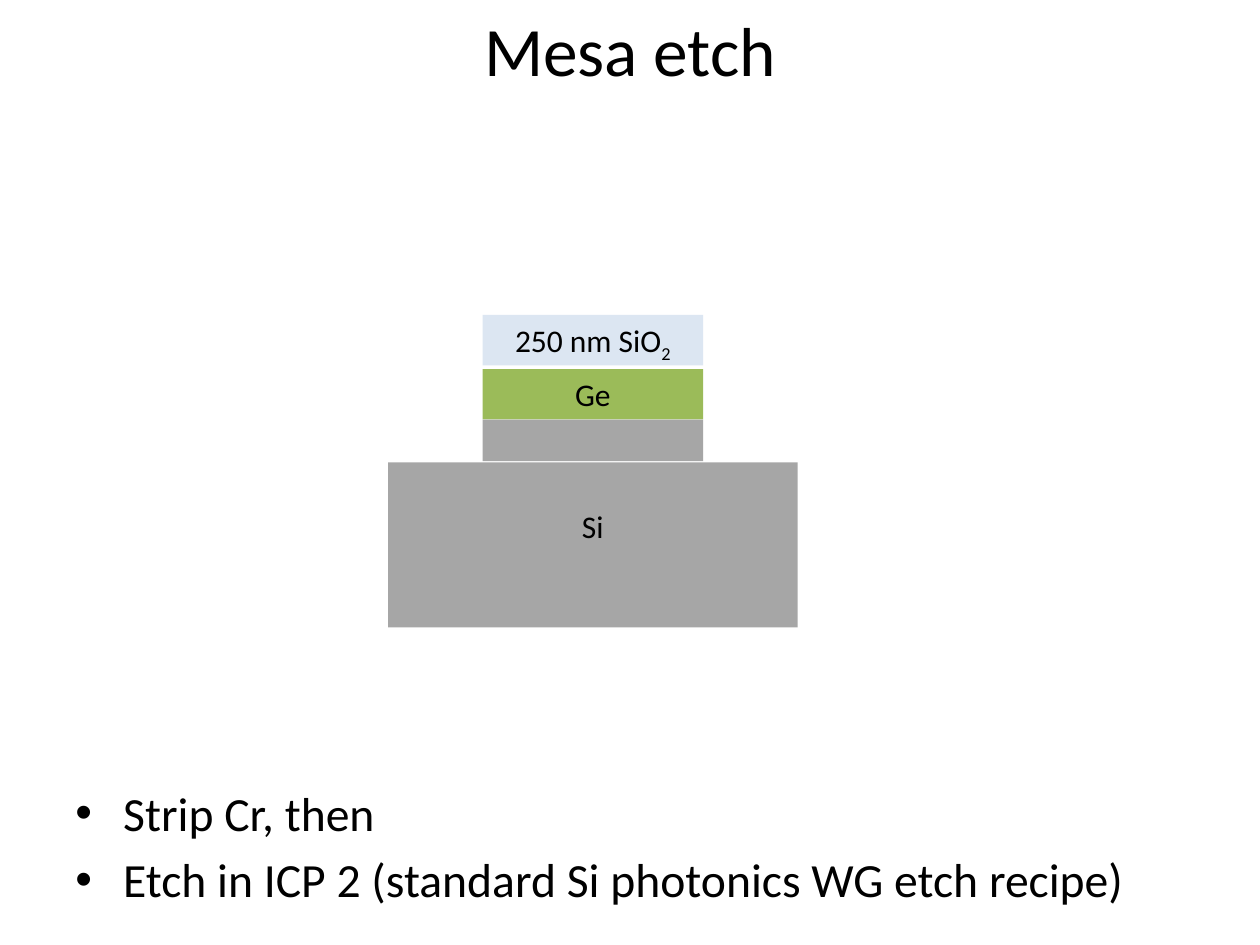
from lxml import etree
from pptx import Presentation
from pptx.dml.color import RGBColor
from pptx.enum.shapes import MSO_SHAPE
from pptx.enum.text import MSO_ANCHOR, PP_ALIGN
from pptx.oxml.ns import qn
from pptx.util import Inches, Pt

RECTANGLE = MSO_SHAPE.RECTANGLE
TOP, MIDDLE = MSO_ANCHOR.TOP, MSO_ANCHOR.MIDDLE
CENTER, LEFT = PP_ALIGN.CENTER, PP_ALIGN.LEFT

BLACK = RGBColor(0x00, 0x00, 0x00)
SILICON = RGBColor(0xA6, 0xA6, 0xA6)
GERMANIUM = RGBColor(0x9B, 0xBB, 0x59)
OXIDE = RGBColor(0xDC, 0xE6, 0xF2)

MARGIN, CONTENT_WIDTH = 0.5, 9
MESA_LEFT, MESA_WIDTH = 3.83, 1.75
BASE_OVERHANG = 0.75


def format_text(frame, size, alignment):
    for para in frame.paragraphs:
        para.alignment = alignment
        for span in para.runs:
            span.font.name = "Calibri"
            span.font.size = Pt(size)
            span.font.color.rgb = BLACK


deck = Presentation()
deck.slide_width, deck.slide_height = Inches(10), Inches(7.5)
page = deck.slides.add_slide(deck.slide_layouts[5])

# Title
title = page.shapes.title
title.left, title.top = Inches(MARGIN), Inches(0)
title.width, title.height = Inches(CONTENT_WIDTH), Inches(0.78)
title.text_frame.text = "Mesa etch"
title.text_frame.vertical_anchor = MIDDLE
format_text(title.text_frame, 39.6, CENTER)

# Process steps
steps = page.shapes.add_textbox(
    Inches(MARGIN), Inches(6.17), Inches(CONTENT_WIDTH), Inches(1.17))
steps.text_frame.word_wrap = True
steps.text_frame.text = (
    "Strip Cr, then\nEtch in ICP 2 (standard Si photonics WG etch recipe)")
format_text(steps.text_frame, 27.2, LEFT)
for para in steps.text_frame.paragraphs:
    para.space_before = Pt(5.4)
    properties = para._p.get_or_add_pPr()
    properties.set("marL", str(Inches(0.38)))
    properties.set("indent", str(-Inches(0.38)))
    etree.SubElement(properties, qn("a:buFont"), typeface="Arial")
    etree.SubElement(properties, qn("a:buChar"), char="•")

# Layer stack: label, subscript, overhang, top, height, colour, text inset
layers = [
    ("Si", "", BASE_OVERHANG, 3.67, 1.31, SILICON, 0.35),
    ("Ge", "", 0, 2.93, 0.4, GERMANIUM, 0.05),
    ("250 nm SiO", "2", 0, 2.5, 0.4, OXIDE, 0.05),
    ("", "", 0, 3.33, 0.33, SILICON, 0.05),
]
for label, subscript, overhang, top, height, colour, inset in layers:
    layer = page.shapes.add_shape(
        RECTANGLE, Inches(MESA_LEFT - overhang), Inches(top),
        Inches(MESA_WIDTH + 2 * overhang), Inches(height))
    layer.shadow.inherit = False
    layer.fill.solid()
    layer.fill.fore_color.rgb = colour
    layer.line.fill.background()
    if label:
        frame = layer.text_frame
        frame.text = label
        frame.vertical_anchor = TOP
        frame.margin_top = Inches(inset)
        if subscript:
            span = frame.paragraphs[0].add_run()
            span.text = subscript
            span.font._element.set("baseline", "-25000")
        format_text(frame, 18, CENTER)

deck.save("out.pptx")
